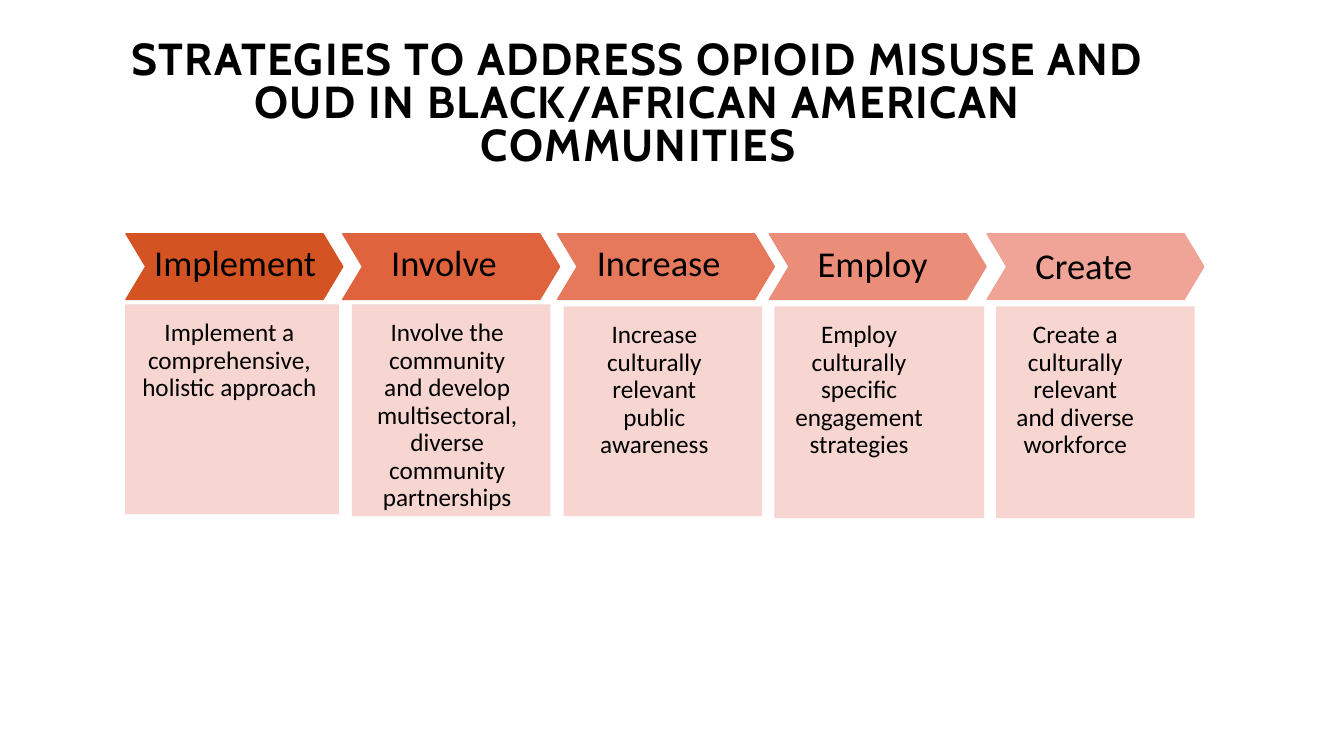
from dataclasses import dataclass

from lxml import etree
from pptx import Presentation
from pptx.dml.color import RGBColor
from pptx.enum.shapes import MSO_SHAPE
from pptx.enum.text import MSO_ANCHOR, PP_ALIGN
from pptx.oxml.ns import qn
from pptx.util import Inches, Pt

CHEVRON, RECT = MSO_SHAPE.CHEVRON, MSO_SHAPE.RECTANGLE
LEFT, CENTER = PP_ALIGN.LEFT, PP_ALIGN.CENTER
TOP, MIDDLE = MSO_ANCHOR.TOP, MSO_ANCHOR.MIDDLE
BLACK, PINK = "000000", "F7D2CD"


@dataclass
class Box:
    left: float
    top: float
    width: float
    height: float

    def lengths(self):
        return [Inches(n) for n in (self.left, self.top, self.width, self.height)]


@dataclass
class Step:
    word: str
    detail: str
    color: str
    left: float
    label: Box
    card: Box
    pads: tuple[float, float]


STEPS = [
    Step("Implement", "Implement a comprehensive, holistic approach", "D35323",
         1.25, Box(1.52, 2.37, 1.8, 0.46), Box(1.24, 3.02, 2.12, 2.08), (0.16, 0.21)),
    Step("Involve", "Involve the community and develop multisectoral, diverse "
         "community partnerships", "DF633C",
         3.4, Box(3.87, 2.37, 1.42, 0.46), Box(3.49, 3.02, 1.97, 2.1), (0.22, 0.3)),
    Step("Increase", "Increase culturally relevant public awareness", "E6785B",
         5.53, Box(5.91, 2.37, 1.24, 0.46), Box(5.59, 3.04, 1.97, 2.08), (0.22, 0.39)),
    Step("Employ", "Employ culturally specific engagement strategies", "EB8E79",
         7.63, Box(8.1, 2.38, 1.11, 0.46), Box(7.68, 3.04, 2.08, 2.1), (0.16, 0.56)),
    Step("Create", "Create a culturally relevant and diverse workforce", "F0A497",
         9.79, Box(10.26, 2.4, 0.98, 0.46), Box(9.88, 3.04, 1.97, 2.1), (0.16, 0.56)),
]


def rgb(code: str) -> RGBColor:
    return RGBColor.from_string(code)


def add_solid(slide, kind, box: Box, color: str):
    shape = slide.shapes.add_shape(kind, *box.lengths())
    shape.shadow.inherit = False
    shape.fill.solid()
    shape.fill.fore_color.rgb = rgb(color)
    return shape


def write(shape, text: str, size: int, face: str = "Calibri", align=CENTER,
          anchor=TOP, pads=(0.01, 0), top: float = 0.01, space: float = 1.0):
    """Fill a shape with one paragraph and return its run."""
    frame = shape.text_frame
    frame.text = text
    frame.word_wrap = True
    frame.vertical_anchor = anchor
    frame.margin_left, frame.margin_right = (Inches(pad) for pad in pads)
    frame.margin_top, frame.margin_bottom = Inches(top), 0
    para = frame.paragraphs[0]
    para.alignment = align
    para.line_spacing = space
    run = para.runs[0]
    run.font.name = face
    run.font.size = Pt(size)
    run.font.color.rgb = rgb(BLACK)
    return run


def add_step(slide, step: Step) -> None:
    arrow = add_solid(slide, CHEVRON, Box(step.left, 2.32, 2.15, 0.65), step.color)
    arrow.adjustments[0] = 0.3
    arrow.line.color.rgb = rgb(step.color)
    arrow.line.width = Pt(1)

    label = slide.shapes.add_textbox(*step.label.lengths())
    write(label, step.word, 26, align=LEFT)

    card = add_solid(slide, RECT, step.card, PINK)
    card.line.fill.background()
    tint = card.fill._xPr.find(".//" + qn("a:srgbClr"))
    etree.SubElement(tint, qn("a:alpha"), val="90000")
    write(card, step.detail, 18, pads=step.pads, top=0.15, space=0.91)


def add_title(slide) -> None:
    title = slide.shapes.add_textbox(*Box(1.24, 0.31, 10.17, 1.38).lengths())
    run = write(title, "STRATEGIES TO ADDRESS OPIOID MISUSE AND OUD IN "
                "BLACK/AFRICAN AMERICAN COMMUNITIES", 32, "Cabin",
                anchor=MIDDLE, top=0.09, space=0.8)
    run.font.bold = True
    run.font._element.set("spc", "100")


def main() -> None:
    deck = Presentation()
    deck.slide_width, deck.slide_height = Inches(13.33), Inches(7.5)
    slide = deck.slides.add_slide(deck.slide_layouts[6])
    for step in STEPS:
        add_step(slide, step)
    add_title(slide)
    deck.save("out.pptx")


if __name__ == "__main__":
    main()
